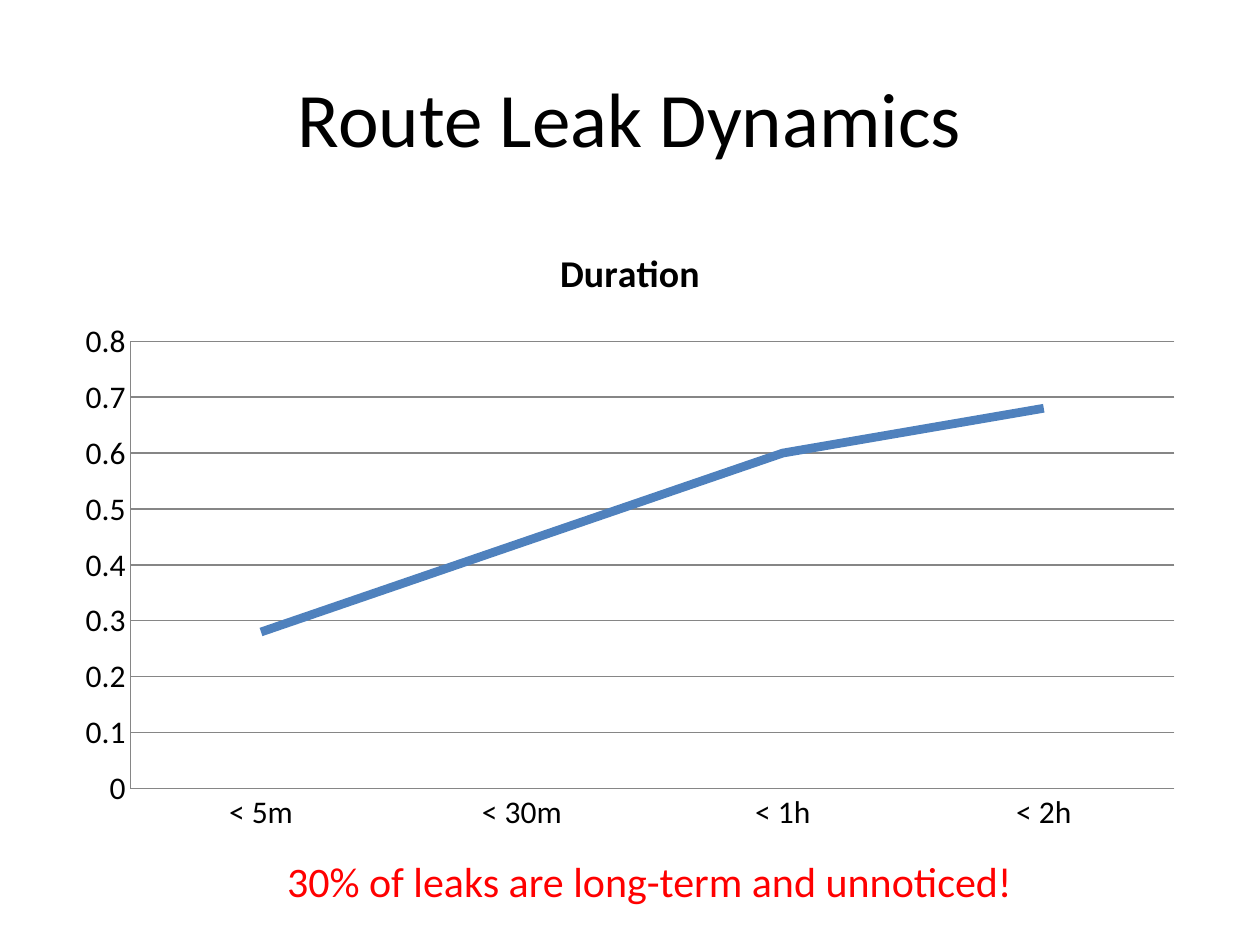
"""Build the Route Leak Dynamics slide with a duration line chart."""
from pptx import Presentation
from pptx.chart.data import CategoryChartData
from pptx.dml.color import RGBColor
from pptx.enum import chart as ch, text
from pptx.util import Inches, Pt

BLACK = RGBColor(0x00, 0x00, 0x00)
RED = RGBColor(0xFF, 0x00, 0x00)
BLUE = RGBColor(0x4F, 0x81, 0xBD)
GRAY = RGBColor(0x86, 0x86, 0x86)


def style_font(font, size, color, bold=False):
    font.name = "Calibri"
    font.size = Pt(size)
    font.bold = bold
    font.color.rgb = color


presentation = Presentation()
presentation.slide_width = Inches(10)
presentation.slide_height = Inches(7.5)
slide = presentation.slides.add_slide(presentation.slide_layouts[5])

title = slide.shapes.title
title.left, title.top = Inches(0.5), Inches(0.3)
title.width, title.height = Inches(9), Inches(1.25)
title.text_frame.text = "Route Leak Dynamics"
title.text_frame.vertical_anchor = text.MSO_ANCHOR.MIDDLE
paragraph = title.text_frame.paragraphs[0]
paragraph.alignment = text.PP_ALIGN.CENTER
style_font(paragraph.font, 44, BLACK)

chart_data = CategoryChartData()
chart_data.categories = ["< 5m", "< 30m", "< 1h", "< 2h"]
chart_data.add_series("Duration", [0.28, 0.44, 0.6, 0.68])
chart = slide.shapes.add_chart(
    ch.XL_CHART_TYPE.LINE_STACKED,
    Inches(0.5), Inches(1.75), Inches(9), Inches(4.95), chart_data,
).chart
style_font(chart.font, 18, BLACK)
chart.has_legend = False
chart.has_title = True
chart.chart_title.include_in_layout = False
chart.chart_title.text_frame.text = "Duration"
style_font(chart.chart_title.text_frame.paragraphs[0].font, 21.6, BLACK, bold=True)

plot = chart.plots[0]
plot.vary_by_categories = False
series = plot.series[0]
series.smooth = False
series.marker.style = ch.XL_MARKER_STYLE.NONE
series.format.line.color.rgb = BLUE
series.format.line.width = Pt(5)

for axis in (chart.category_axis, chart.value_axis):
    axis.major_tick_mark = ch.XL_TICK_MARK.NONE
    axis.minor_tick_mark = ch.XL_TICK_MARK.NONE
    axis.format.line.color.rgb = GRAY
    axis.format.line.width = Pt(0.75)

value_axis = chart.value_axis
value_axis.minimum_scale = 0
value_axis.maximum_scale = 0.8
value_axis.major_unit = 0.1
value_axis.tick_labels.number_format = "General"
value_axis.tick_labels.number_format_is_linked = False
value_axis.has_major_gridlines = True
value_axis.major_gridlines.format.line.color.rgb = GRAY
value_axis.major_gridlines.format.line.width = Pt(0.75)

takeaway = slide.shapes.add_textbox(Inches(0.98), Inches(6.74), Inches(8.35), Inches(0.5))
takeaway.text_frame.word_wrap = True
takeaway.text_frame.auto_size = text.MSO_AUTO_SIZE.SHAPE_TO_FIT_TEXT
takeaway.text_frame.text = "30% of leaks are long-term and unnoticed!"
paragraph = takeaway.text_frame.paragraphs[0]
paragraph.alignment = text.PP_ALIGN.CENTER
style_font(paragraph.font, 24, RED)

presentation.save("out.pptx")
